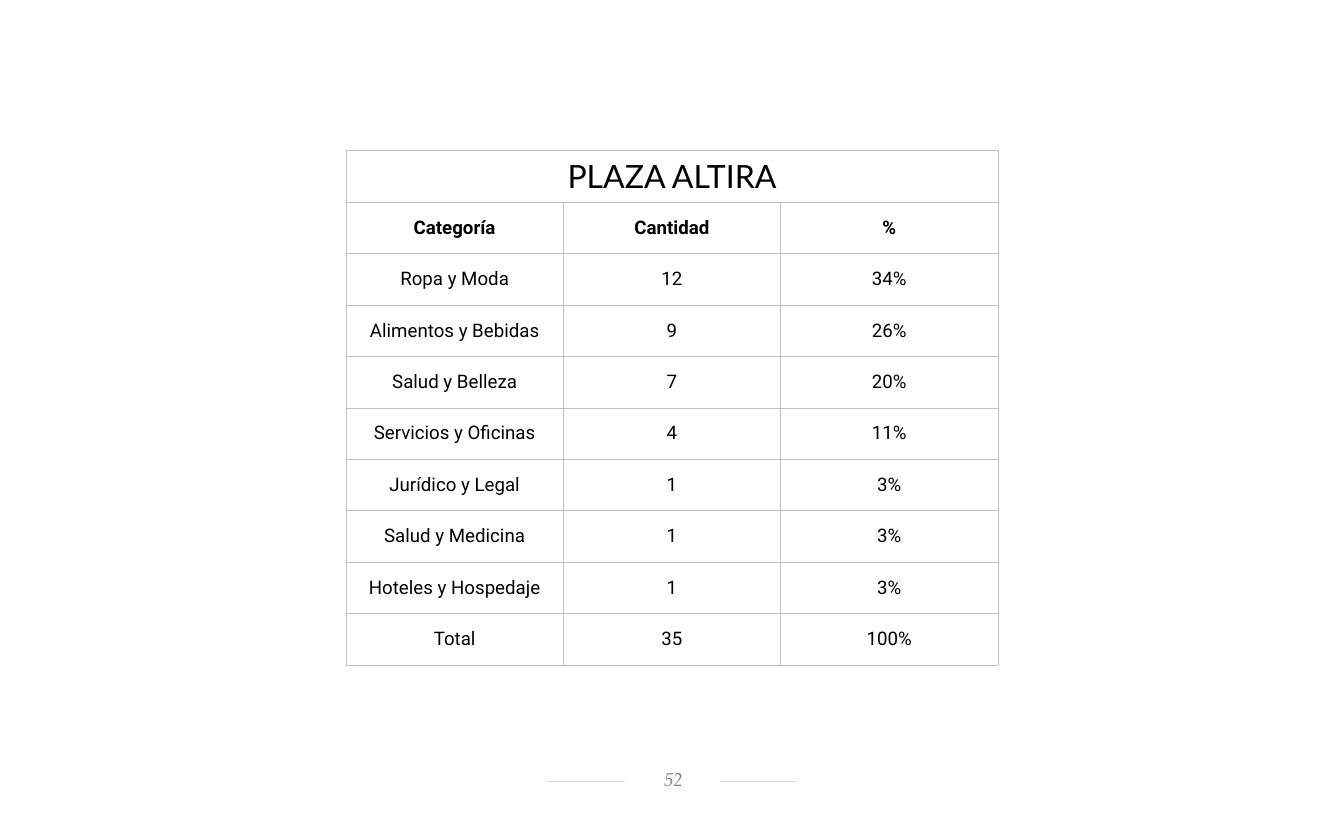
from lxml import etree
from pptx import Presentation
from pptx.dml.color import RGBColor
from pptx.enum import shapes, text
from pptx.oxml import parse_xml
from pptx.oxml.ns import nsdecls, qn
from pptx.util import Pt

COLORS = {"paper": "FFFFFF", "ink": "000000", "grid": "BFBFBF",
          "rule": "D9D9D9", "folio": "808080"}
TITLE = "PLAZA ALTIRA"
HEADER = ("Categoría", "Cantidad", "%")
ROWS = [
    ("Ropa y Moda", "12", "34%"),
    ("Alimentos y Bebidas", "9", "26%"),
    ("Salud y Belleza", "7", "20%"),
    ("Servicios y Oficinas", "4", "11%"),
    ("Jurídico y Legal", "1", "3%"),
    ("Salud y Medicina", "1", "3%"),
    ("Hoteles y Hospedaje", "1", "3%"),
    ("Total", "35", "100%"),
]


class SlideBuilder:
    """Holds the colours, fonts and current slide; lengths are in points."""

    title_font, body_font, folio_font = "Lato", "Roboto", "TeX Gyre Pagella"

    def __init__(self, slide):
        self.slide = slide

    def color(self, name):
        return RGBColor.from_string(COLORS[name])

    def add_text(self, frame, words, font, size, color="ink", bold=False, italic=False):
        para = frame.paragraphs[0]
        para.alignment = text.PP_ALIGN.CENTER
        span = para.add_run()
        span.text = words
        span.font.name, span.font.size = font, Pt(size)
        span.font.bold, span.font.italic = bold, italic
        span.font.color.rgb = self.color(color)

    def line(self, left, right, y):
        rule = self.slide.shapes.add_connector(
            shapes.MSO_CONNECTOR.STRAIGHT, Pt(left), Pt(y), Pt(right), Pt(y))
        rule.line.color.rgb = self.color("rule")
        rule.line.width = Pt(0.5)
        etree.SubElement(rule._element.spPr, qn("a:effectLst"))

    def folio(self, number, left, top, width, height):
        box = self.slide.shapes.add_shape(
            shapes.MSO_SHAPE.RECTANGLE, Pt(left), Pt(top), Pt(width), Pt(height))
        box.shadow.inherit = False
        box.fill.solid()
        box.fill.fore_color.rgb = self.color("paper")
        box.line.fill.background()
        frame = box.text_frame
        frame.word_wrap = True
        frame.vertical_anchor = text.MSO_ANCHOR.MIDDLE
        frame.margin_left, frame.margin_right = Pt(8.6), Pt(7.2)
        frame.margin_top, frame.margin_bottom = Pt(1.4), Pt(3.6)
        self.add_text(frame, number, self.folio_font, 14, "folio", italic=True)

    def style_cell(self, cell):
        cell.fill.background()
        cell.vertical_anchor = text.MSO_ANCHOR.MIDDLE
        cell.margin_left = cell.margin_right = Pt(0.7)
        cell.margin_top = cell.margin_bottom = Pt(0.7)
        properties = cell._tc.get_or_add_tcPr()
        for index, side in enumerate("LRTB"):
            properties.insert(index, parse_xml(
                f'<a:ln{side} {nsdecls("a")} w="{Pt(0.5)}"><a:solidFill>'
                f'<a:srgbClr val="{COLORS["grid"]}"/></a:solidFill></a:ln{side}>'))

    def table(self, title, header, rows, left, top, column_width, row_height):
        """Draw a table with a merged title row and a bold header row."""
        lines = [header, *rows]
        count, columns = len(lines) + 1, len(header)
        table = self.slide.shapes.add_table(
            count, columns, Pt(left), Pt(top),
            Pt(column_width * columns), Pt(row_height * count)).table
        table.first_row = table.horz_banding = False
        for column in table.columns:
            column.width = Pt(column_width)
        for row in table.rows:
            row.height = Pt(row_height)
        for cell in table.iter_cells():
            self.style_cell(cell)
        table.cell(0, 0).merge(table.cell(0, columns - 1))
        self.add_text(table.cell(0, 0).text_frame, title, self.title_font, 24)
        for r, values in enumerate(lines, 1):
            for c, value in enumerate(values):
                self.add_text(table.cell(r, c).text_frame, value,
                              self.body_font, 14, bold=r == 1)


def main():
    deck = Presentation()
    deck.slide_width, deck.slide_height = Pt(1008), Pt(612)
    page = SlideBuilder(deck.slides.add_slide(deck.slide_layouts[6]))
    page.line(411, 597, 586)
    page.folio("52", 468.7, 574.6, 71.3, 20.9)
    page.table(TITLE, HEADER, ROWS, 259.5, 113, 163, 38.6)
    deck.save("out.pptx")


if __name__ == "__main__":
    main()
